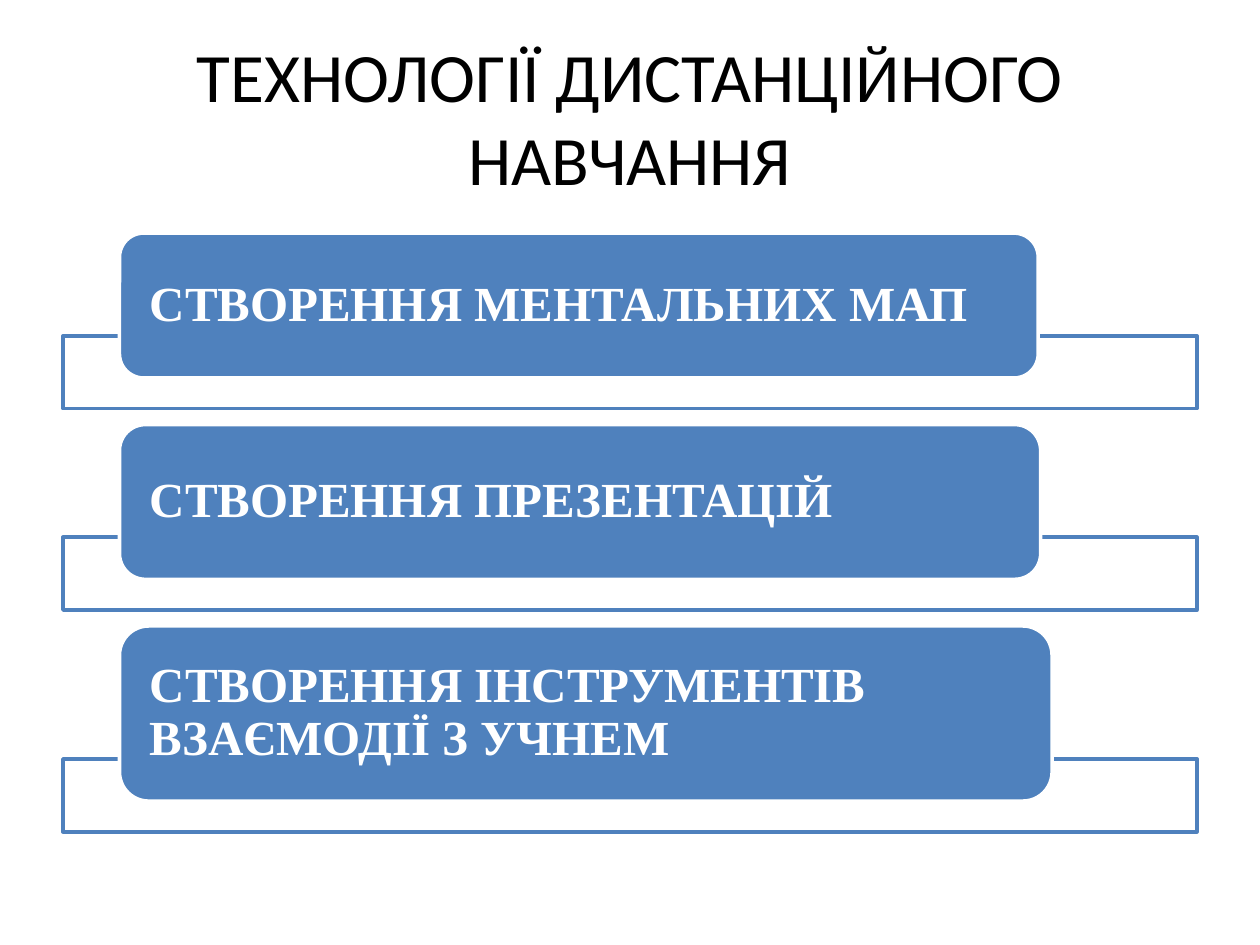
from lxml import etree
from pptx import Presentation
from pptx.dml.color import RGBColor
from pptx.enum.shapes import MSO_SHAPE as Shape
from pptx.enum.text import MSO_ANCHOR as Anchor, PP_ALIGN as Align
from pptx.oxml.ns import qn
from pptx.util import Cm, Pt

BLUE, WHITE, BLACK = "4F81BD", "FFFFFF", "000000"
TOPICS = [  # text, box width, box height in cm
    ("СТВОРЕННЯ МЕНТАЛЬНИХ МАП", 18.52, 2.92),
    ("СТВОРЕННЯ ПРЕЗЕНТАЦІЙ", 18.57, 3.12),
    ("СТВОРЕННЯ ІНСТРУМЕНТІВ ВЗАЄМОДІЇ З УЧНЕМ", 18.8, 3.53),
]
BAR_HEIGHT, OVERLAP, GAP = 1.47, 0.85, 0.32
BOX_INDENT, TEXT_INDENT = 1.14, 0.61
CORNER = 0.1667
CORNER_INSET = CORNER * 0.29  # text inset caused by the rounded corner


def color(value):
    return RGBColor.from_string(value)


def write(shape, text, *, font, size, fill, bold=False, align=Align.LEFT,
          spacing=None, margins=None):
    frame = shape.text_frame
    frame.word_wrap = True
    frame.vertical_anchor = Anchor.MIDDLE
    if margins is not None:
        frame.margin_left = frame.margin_right = Cm(margins)
        frame.margin_top = frame.margin_bottom = 0
    para = frame.paragraphs[0]
    para.alignment = align
    if spacing:
        para.line_spacing = spacing
    span = para.add_run()
    span.text = text
    span.font.name, span.font.size, span.font.bold = font, Pt(size), bold
    span.font.color.rgb = color(fill)


def add_box(page, kind, left, top, width, height, fill, line):
    box = page.shapes.add_shape(kind, Cm(left), Cm(top), Cm(width), Cm(height))
    box.shadow.inherit = False
    box.fill.solid()
    box.fill.fore_color.rgb = color(fill)
    box.line.color.rgb = color(line)
    box.line.width = Pt(2)
    return box


def set_opacity(box, percent):
    tone = box.fill._xPr.find(qn("a:solidFill"))[0]
    etree.SubElement(tone, qn("a:alpha")).set("val", str(percent * 1000))


def add_title(page, text, left, top, width, height):
    title = page.shapes.title
    title.left, title.top, title.width, title.height = map(
        Cm, (left, top, width, height))
    write(title, text, font="Calibri", size=39.6, fill=BLACK,
          align=Align.CENTER)


def add_topics(page, topics, left, top, width):
    for text, box_width, box_height in topics:
        # Outlined bar behind the lower edge of the box
        bar_top = top + box_height - OVERLAP
        bar = add_box(page, Shape.RECTANGLE, left, bar_top, width, BAR_HEIGHT,
                      WHITE, BLUE)
        set_opacity(bar, 90)
        # Rounded box with the topic
        box = add_box(page, Shape.ROUNDED_RECTANGLE, left + BOX_INDENT, top,
                      box_width, box_height, BLUE, WHITE)
        box.adjustments[0] = CORNER
        write(box, text, font="Times New Roman", size=28, fill=WHITE,
              bold=True, spacing=0.9,
              margins=TEXT_INDENT - box_height * CORNER_INSET)
        top = bar_top + BAR_HEIGHT + GAP


def main():
    deck = Presentation()
    deck.slide_width, deck.slide_height = Cm(25.4), Cm(19.05)
    page = deck.slides.add_slide(deck.slide_layouts[5])
    add_title(page, "ТЕХНОЛОГІЇ ДИСТАНЦІЙНОГО НАВЧАННЯ",
              1.27, 0.76, 22.86, 3.18)
    add_topics(page, TOPICS, 1.27, 4.7, 22.86)
    deck.save("out.pptx")


if __name__ == "__main__":
    main()
